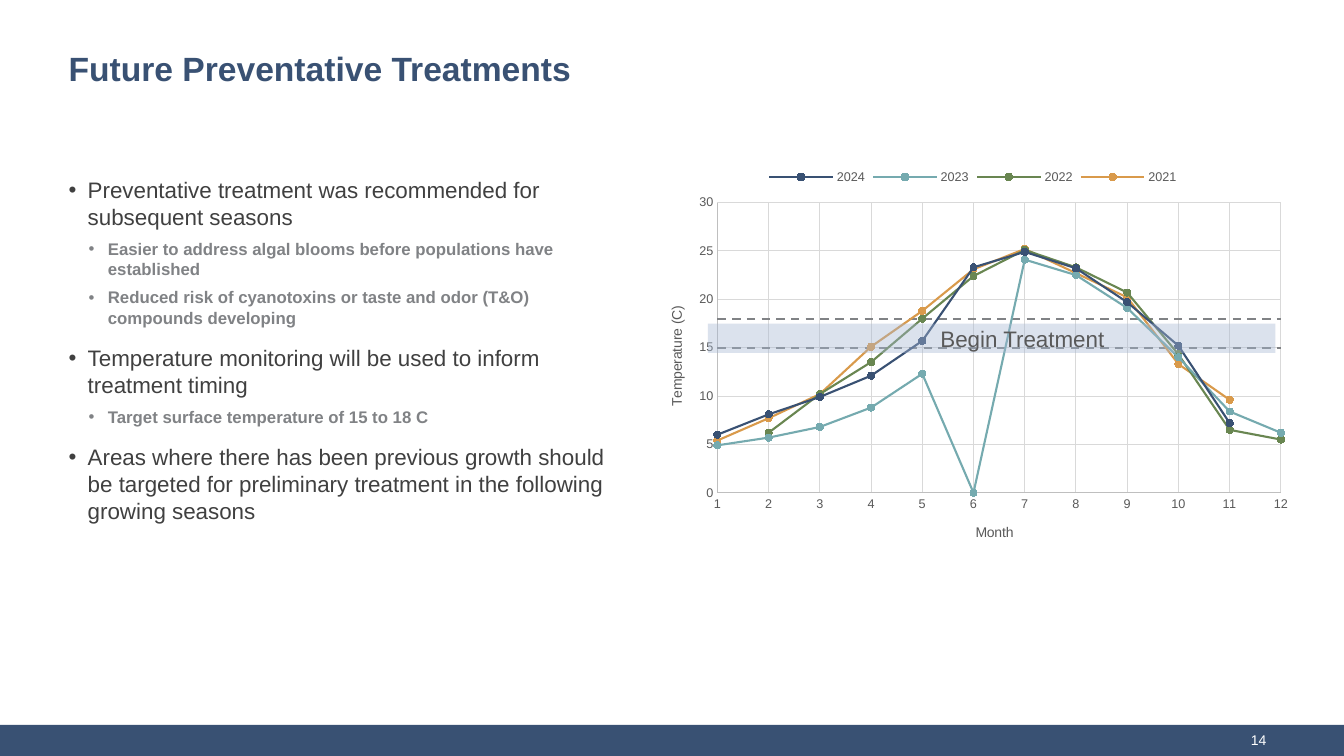
from lxml.etree import SubElement
from pptx import Presentation
from pptx.chart.data import XyChartData
from pptx.dml.color import RGBColor
from pptx.enum.chart import XL_CHART_TYPE, XL_LEGEND_POSITION, XL_MARKER_STYLE, XL_TICK_MARK
from pptx.enum.dml import MSO_LINE
from pptx.enum.shapes import MSO_SHAPE
from pptx.enum.text import MSO_ANCHOR, PP_ALIGN
from pptx.oxml import parse_xml
from pptx.oxml.ns import nsdecls, qn
from pptx.util import Inches, Pt

NAVY = RGBColor(0x39, 0x51, 0x73)
TEAL = RGBColor(0x75, 0xAA, 0xAF)
GREEN = RGBColor(0x69, 0x86, 0x51)
AMBER = RGBColor(0xD9, 0x9A, 0x4B)
GRAY = RGBColor(0x80, 0x82, 0x85)
DARK = RGBColor(0x40, 0x40, 0x40)
LABEL = RGBColor(0x59, 0x59, 0x59)
AXIS = RGBColor(0xBF, 0xBF, 0xBF)
GRID = RGBColor(0xD9, 0xD9, 0xD9)
BAND = RGBColor(0xA5, 0xB7, 0xD2)
WHITE = RGBColor(0xFF, 0xFF, 0xFF)

POINTS = [
    (0, "Preventative treatment was recommended for subsequent seasons"),
    (1, "Easier to address algal blooms before populations have established"),
    (1, "Reduced risk of cyanotoxins or taste and odor (T&O) compounds developing"),
    (0, "Temperature monitoring will be used to inform treatment timing"),
    (1, "Target surface temperature of 15 to 18 C"),
    (0, "Areas where there has been previous growth should be targeted for "
        "preliminary treatment in the following growing seasons"),
]
YEARS = [
    ("2024", NAVY, [6, 8.1, 9.9, 12.1, 15.7, 23.3, 24.9, 23.2, 19.7, 15.2, 7.2, None]),
    ("2023", TEAL, [4.9, 5.7, 6.8, 8.8, 12.3, 0, 24.1, 22.5, 19.1, 14, 8.4, 6.2]),
    ("2022", GREEN, [None, 6.2, 10.2, 13.5, 18, 22.4, 25.1, 23.3, 20.7, 14.3, 6.5, 5.5]),
    ("2021", AMBER, [5.4, 7.7, 10.2, 15.1, 18.8, 23.1, 25.2, 22.7, 20.2, 13.3, 9.6, None]),
]
LIMITS = [("Series 5", GRAY, [15] * 12), ("Series 6", GRAY, [18] * 12)]


def style(font, size, color, bold=False):
    """Set the face, size, colour and weight of a font."""
    font.name, font.size, font.bold = "Arial", Pt(size), bold
    font.color.rgb = color


def add_run(para, text, size, color, bold=False):
    """Add one styled run to a paragraph."""
    run = para.add_run()
    run.text = text
    style(run.font, size, color, bold)


def add_box(slide, left, top, width, height, anchor=MSO_ANCHOR.MIDDLE, inset=0.0):
    """Add a wrapping text box and return its frame."""
    box = slide.shapes.add_textbox(Inches(left), Inches(top), Inches(width), Inches(height))
    frame = box.text_frame
    frame.word_wrap, frame.vertical_anchor = True, anchor
    frame.margin_left = frame.margin_right = Inches(inset)
    return frame


def add_bar(slide, left, top, width, height, color):
    """Add a plain rectangle without outline."""
    bar = slide.shapes.add_shape(
        MSO_SHAPE.RECTANGLE, Inches(left), Inches(top), Inches(width), Inches(height))
    bar.shadow.inherit = False
    bar.fill.solid()
    bar.fill.fore_color.rgb = color
    bar.line.fill.background()
    return bar


def add_points(slide):
    """Add the two-level bullet list."""
    frame = add_box(slide, 0.68, 1.7, 5.35, 5.01, MSO_ANCHOR.TOP)
    for i, (level, text) in enumerate(POINTS):
        para = frame.add_paragraph() if i else frame.paragraphs[0]
        props = para._p.get_or_add_pPr()
        props.set("marL", str(Inches(0.39 if level else 0.19)))
        props.set("indent", str(-Inches(0.19)))
        SubElement(props, qn("a:buFont"), typeface="Arial")
        SubElement(props, qn("a:buChar"), char="•")
        para.level = level
        para.space_before = Pt(6 if i and not level else 0)
        para.space_after = Pt(6)
        size, color = (12, GRAY) if level else (16, DARK)
        add_run(para, text, size, color, bool(level))


def layout(x, y, size=None):
    """Make a manual chart layout from fractions."""
    parts = [("xMode", "edge"), ("yMode", "edge"), ("x", x), ("y", y)]
    if size:
        parts = [("layoutTarget", "inner")] + parts + [("w", size[0]), ("h", size[1])]
    body = "".join(f'<c:{name} val="{val}"/>' for name, val in parts)
    return parse_xml(f'<c:layout {nsdecls("c")}><c:manualLayout>{body}</c:manualLayout></c:layout>')


def place(node, plan):
    """Give a chart element its layout in schema order."""
    for old in node.findall(qn("c:layout")):
        node.remove(old)
    node.insert(0 if node.find(qn("c:tx")) is None else 1, plan)


def set_axis(axis, title, low, high, step, spot, turn=0):
    """Set scale, lines and title of an axis."""
    axis.minimum_scale, axis.maximum_scale, axis.major_unit = low, high, step
    axis.major_tick_mark = axis.minor_tick_mark = XL_TICK_MARK.NONE
    axis.has_major_gridlines = True
    for line, color in ((axis.format.line, AXIS), (axis.major_gridlines.format.line, GRID)):
        line.color.rgb, line.width = color, Pt(0.75)
    style(axis.tick_labels.font, 9, LABEL)
    axis.tick_labels.number_format = "General"
    axis.tick_labels.number_format_is_linked = False
    name = axis.axis_title
    add_run(name.text_frame.paragraphs[0], title, 10, LABEL)
    body = name._element.find(".//" + qn("a:bodyPr"))
    body.set("rot", str(turn * 60000))
    body.set("vert", "horz")
    place(name._element, layout(*spot))


def set_line(series, color, dashed):
    """Style a series as a marked or a dashed line."""
    line = series.format.line
    line.color.rgb, line.width = color, Pt(1.5)
    mark = series.marker
    if dashed:
        line.dash_style = MSO_LINE.DASH
        mark.style = XL_MARKER_STYLE.NONE
        return
    mark.style, mark.size = XL_MARKER_STYLE.CIRCLE, 5
    mark.format.fill.solid()
    mark.format.fill.fore_color.rgb = color
    mark.format.line.color.rgb = color


def drop_gaps(series):
    """Leave months without a reading empty."""
    for point in list(series._element.iter(qn("c:pt"))):
        if point.find(qn("c:v")).text in (None, "", "None"):
            point.getparent().remove(point)


def add_temps(slide):
    """Add the chart of monthly temperatures."""
    rows = YEARS + LIMITS
    data = XyChartData()
    for name, _, temps in rows:
        series = data.add_series(name)
        for month, temp in enumerate(temps, 1):
            series.add_data_point(month, temp)
    chart = slide.shapes.add_chart(
        XL_CHART_TYPE.XY_SCATTER_LINES, Inches(6.4), Inches(1.57),
        Inches(6.5), Inches(4), data).chart
    style(chart.font, 10, LABEL)
    chart.has_title = False
    plot = chart.plots[0]
    plot.vary_by_categories = False
    for i, (series, row) in enumerate(zip(plot.series, rows)):
        drop_gaps(series)
        set_line(series, row[1], i >= len(YEARS))
    set_axis(chart.category_axis, "Month", 1, 12, 1, (0.5, 0.9))
    set_axis(chart.value_axis, "Temperature (C)", 0, 30, 5, (0.03, 0.36), -90)
    place(chart._chartSpace.chart.plotArea, layout(0.11, 0.11, (0.86, 0.72)))
    chart.has_legend = True
    legend = chart.legend
    legend.position, legend.include_in_layout = XL_LEGEND_POSITION.TOP, False
    style(legend.font, 9, LABEL)
    for i in range(len(LIMITS)):
        legend._element.insert(1 + i, parse_xml(
            f'<c:legendEntry {nsdecls("c")}><c:idx val="{len(YEARS) + i}"/>'
            '<c:delete val="1"/></c:legendEntry>'))


def add_band(slide):
    """Add the translucent treatment band."""
    band = add_bar(slide, 7.02, 3.21, 5.63, 0.29, BAND)
    color = band._element.spPr.find(".//" + qn("a:srgbClr"))
    SubElement(color, qn("a:alpha"), val="40000")
    frame = band.text_frame
    frame.vertical_anchor, frame.margin_left = MSO_ANCHOR.MIDDLE, Inches(0.71)
    para = frame.paragraphs[0]
    para.alignment = PP_ALIGN.CENTER
    add_run(para, "Begin Treatment", 16, LABEL)


def main():
    """Build and save the slide."""
    deck = Presentation()
    deck.slide_width, deck.slide_height = Inches(13.33), Inches(7.5)
    slide = deck.slides.add_slide(deck.slide_layouts[6])
    add_bar(slide, 0, 7.19, 13.33, 0.31, NAVY)
    title = add_box(slide, 0.68, 0.38, 11.99, 0.6)
    add_run(title.paragraphs[0], "Future Preventative Treatments", 24, NAVY, True)
    number = add_box(slide, 9.83, 7.19, 2.83, 0.29, inset=0.1).paragraphs[0]
    number.alignment = PP_ALIGN.RIGHT
    add_run(number, "14", 10, WHITE)
    add_points(slide)
    add_temps(slide)
    add_band(slide)
    deck.save("out.pptx")


if __name__ == "__main__":
    main()
